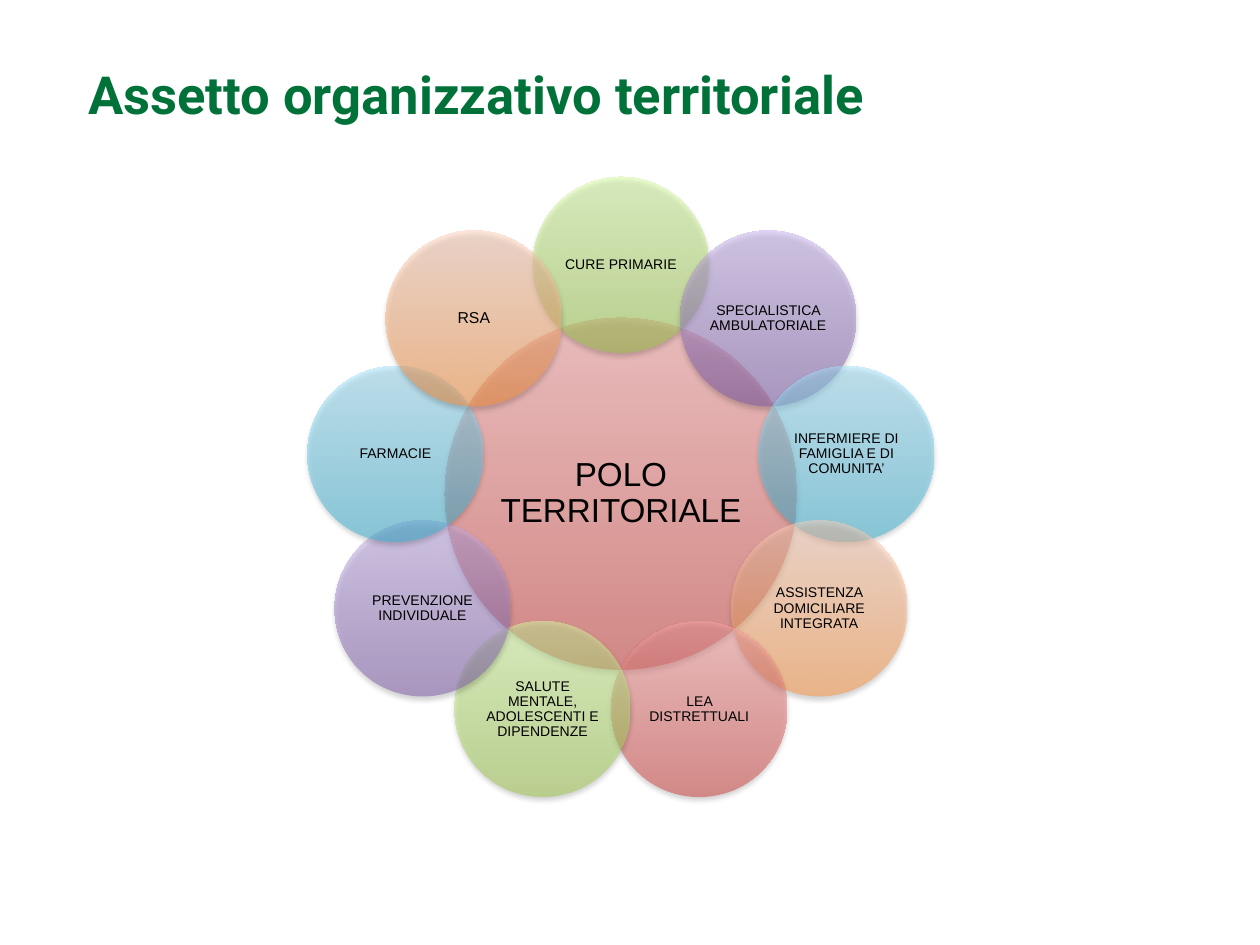
"""Build a slide showing the territorial hub ringed by its nine services."""
import math
from dataclasses import dataclass

import pptx
import pptx.dml.color
import pptx.enum.shapes
import pptx.enum.text
import pptx.oxml.ns
import pptx.util
from lxml import etree

TITLE = "Assetto organizzativo territoriale"
HUB = "POLO TERRITORIALE"
SERVICES = [
    ("CURE PRIMARIE", "green", 8),
    ("SPECIALISTICA AMBULATORIALE", "purple", 8),
    ("INFERMIERE DI FAMIGLIA E DI COMUNITA’", "blue", 8),
    ("ASSISTENZA DOMICILIARE INTEGRATA", "orange", 8),
    ("LEA DISTRETTUALI", "red", 8),
    ("SALUTE MENTALE, ADOLESCENTI E DIPENDENZE", "green", 8),
    ("PREVENZIONE INDIVIDUALE", "purple", 8),
    ("FARMACIE", "blue", 8),
    ("RSA", "orange", 9),
]
GRADIENTS = {
    "red": ("D1403C", "FFA6A5"),
    "green": ("A0CA4A", "DAFFA5"),
    "purple": ("7F5BAB", "C8B0ED"),
    "blue": ("39B7D8", "A7E6FF"),
    "orange": ("FF953E", "FFD2BD"),
}


@dataclass(frozen=True)
class Theme:
    title_font: str = "Roboto"
    title_size: int = 30
    title_color: str = "007239"
    font: str = "Arial"
    hub_size: int = 19
    text_color: str = "000000"
    opacity: int = 50
    shadow_opacity: int = 35


THEME = Theme()
EMU_PER_PX = 914400 / 126
SLIDE_WIDTH, SLIDE_HEIGHT = 1260, 945
TITLE_BOX = (76, 42, 1071, 103)
CENTER_X, CENTER_Y = 621, 494
HUB_DIAMETER, SERVICE_DIAMETER, RING_RADIUS = 352, 176, 229
LABEL_INSET = 1


def px(value):
    return pptx.util.Emu(round(value * EMU_PER_PX))


def rgb(color):
    return pptx.dml.color.RGBColor.from_string(color)


def square(center_x, center_y, side):
    return [px(value) for value in (center_x - side / 2, center_y - side / 2, side, side)]


def add_child(parent, tag, **attributes):
    return etree.SubElement(parent, pptx.oxml.ns.qn(tag), **attributes)


def add_text(slide, box, text, font, size, color, bold=False):
    text_frame = slide.shapes.add_textbox(*box).text_frame
    text_frame.word_wrap = True
    text_frame.vertical_anchor = pptx.enum.text.MSO_ANCHOR.MIDDLE
    text_frame.text = text
    for run in text_frame.paragraphs[0].runs:
        run.font.name = font
        run.font.size = pptx.util.Pt(size)
        run.font.color.rgb = rgb(color)
        run.font.bold = bold
    return text_frame


def fill_circle(shape, gradient):
    shape.fill.gradient()
    shape.fill.gradient_angle = 90
    for stop, color in zip(shape.fill.gradient_stops, gradient):
        stop.color.rgb = rgb(color)
    for color in shape.element.spPr.iter(pptx.oxml.ns.qn("a:srgbClr")):
        add_child(color, "a:alpha", val=str(THEME.opacity * 1000))
    shape.line.fill.background()


def add_shadow(shape):
    shape.shadow.inherit = False
    effects = shape.element.spPr.find(pptx.oxml.ns.qn("a:effectLst"))
    shadow = add_child(
        effects, "a:outerShdw", blurRad=str(pptx.util.Pt(3.1)),
        dist=str(pptx.util.Pt(1.8)), dir="5400000", rotWithShape="0",
    )
    color = add_child(shadow, "a:srgbClr", val="000000")
    add_child(color, "a:alpha", val=str(THEME.shadow_opacity * 1000))


def add_circle(slide, center_x, center_y, diameter, label, color, size):
    shape = slide.shapes.add_shape(
        pptx.enum.shapes.MSO_SHAPE.OVAL, *square(center_x, center_y, diameter)
    )
    fill_circle(shape, GRADIENTS[color])
    add_shadow(shape)
    label_box = square(center_x, center_y, diameter / math.sqrt(2))
    text_frame = add_text(slide, label_box, label, THEME.font, size, THEME.text_color)
    for side in ("left", "top", "right", "bottom"):
        setattr(text_frame, f"margin_{side}", px(LABEL_INSET))
    paragraph = text_frame.paragraphs[0]
    paragraph.alignment = pptx.enum.text.PP_ALIGN.CENTER
    paragraph.line_spacing = 0.9


def main():
    presentation = pptx.Presentation()
    presentation.slide_width = px(SLIDE_WIDTH)
    presentation.slide_height = px(SLIDE_HEIGHT)
    slide = presentation.slides.add_slide(presentation.slide_layouts[6])
    title_box = [px(value) for value in TITLE_BOX]
    add_text(slide, title_box, TITLE, THEME.title_font, THEME.title_size, THEME.title_color, True)
    add_circle(slide, CENTER_X, CENTER_Y, HUB_DIAMETER, HUB, "red", THEME.hub_size)
    for index, (label, color, size) in enumerate(SERVICES):
        angle = math.tau * index / len(SERVICES)
        center_x = CENTER_X + RING_RADIUS * math.sin(angle)
        center_y = CENTER_Y - RING_RADIUS * math.cos(angle)
        add_circle(slide, center_x, center_y, SERVICE_DIAMETER, label, color, size)
    presentation.save("out.pptx")


if __name__ == "__main__":
    main()
